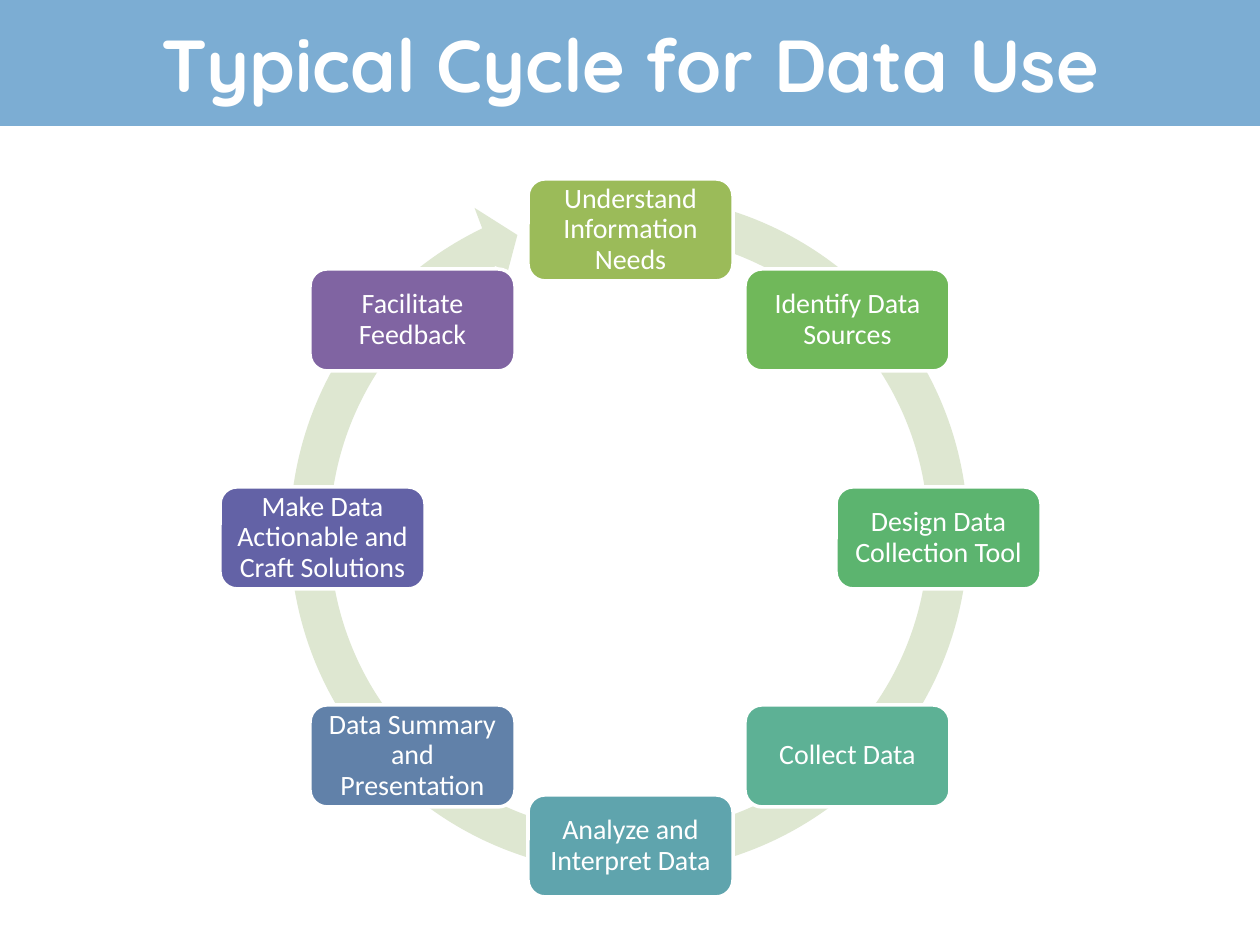
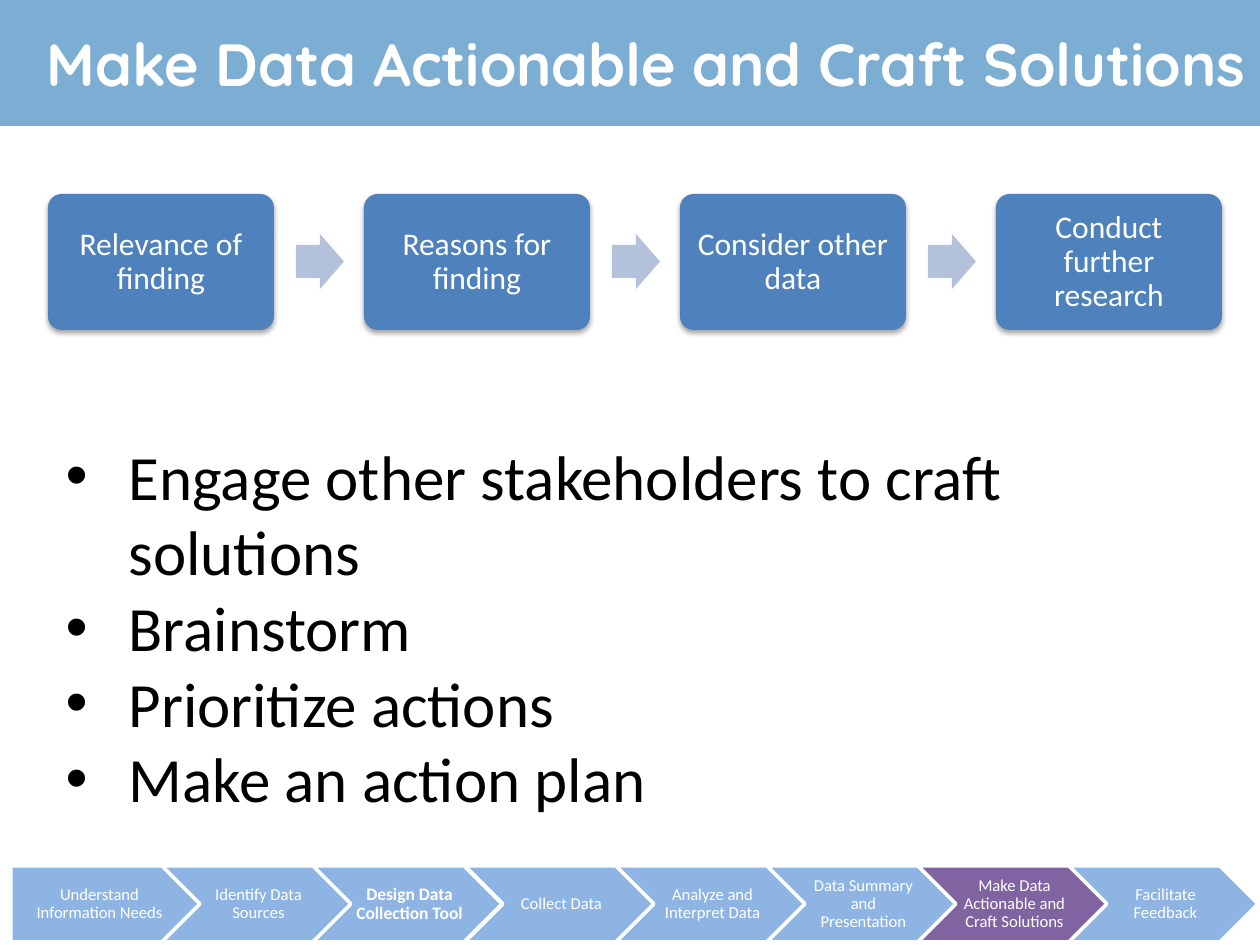
from math import cos, pi, sin

from lxml.etree import SubElement
from pptx import Presentation
from pptx.dml.color import RGBColor
from pptx.enum.shapes import MSO_SHAPE
from pptx.enum.text import MSO_ANCHOR, MSO_AUTO_SIZE, PP_ALIGN
from pptx.oxml.ns import qn
from pptx.util import Emu, Pt

PX_PER_INCH = 126
SLIDE_WIDTH, SLIDE_HEIGHT = 1260, 945

TITLE_FONT, BODY_FONT = "Quicksand", "Calibri"
WHITE, BLACK = "FFFFFF", "000000"
BAND_BLUE = "7CADD3"
RING_GREEN = "DEE7D1"
FLOW_BLUE, FLOW_ARROW_BLUE = "4F81BD", "B3C1DB"
STAGE_BLUE, CURRENT_PURPLE = "8EB4E3", "8064A2"

STAGES = [
    ("Understand Information Needs", "9BBB59"),
    ("Identify Data Sources", "70B85A"),
    ("Design Data Collection Tool", "5CB46F"),
    ("Collect Data", "5DB195"),
    ("Analyze and Interpret Data", "5FA4AD"),
    ("Data Summary and Presentation", "6181A9"),
    ("Make Data Actionable and Craft Solutions", "6362A6"),
    ("Facilitate Feedback", "8064A2"),
]
CURRENT_STAGE = "Make Data Actionable and Craft Solutions"
BOLD_STAGE = "Design Data Collection Tool"
FLOW_STEPS = ["Relevance of finding", "Reasons for finding",
              "Consider other data", "Conduct further research"]
ACTIONS = ["Engage other stakeholders to craft solutions", "Brainstorm",
           "Prioritize actions", "Make an action plan"]


def px(length):
    return Emu(round(length * 914400 / PX_PER_INCH))


def color(hex_string):
    return RGBColor.from_string(hex_string)


def place(shape, left, top, width, height):
    shape.left, shape.top = px(left), px(top)
    shape.width, shape.height = px(width), px(height)


def paint(shape, fill):
    shape.fill.solid()
    shape.fill.fore_color.rgb = color(fill)


def add_run(paragraph, text, size, font=BODY_FONT, fill=WHITE, bold=False):
    run = paragraph.add_run()
    run.text = text
    run.font.name = font
    run.font.size = Pt(size)
    run.font.bold = bold
    run.font.color.rgb = color(fill)


def add_title_band(slide, text, size, width=SLIDE_WIDTH):
    title = slide.shapes.title
    place(title, 0, 0, width, 126)
    paint(title, BAND_BLUE)
    frame = title.text_frame
    frame.auto_size = MSO_AUTO_SIZE.NONE
    frame.vertical_anchor = MSO_ANCHOR.MIDDLE
    paragraph = frame.paragraphs[0]
    paragraph.alignment = PP_ALIGN.CENTER
    add_run(paragraph, text, size, TITLE_FONT, bold=True)


def add_figure(slide, kind, box, fill, adjustments=(), outlined=False):
    shape = slide.shapes.add_shape(kind, *[px(length) for length in box])
    shape.shadow.inherit = False
    paint(shape, fill)
    if outlined:
        shape.line.color.rgb = color(WHITE)
        shape.line.width = Pt(2)
    else:
        shape.line.fill.background()
    for index, value in enumerate(adjustments):
        shape.adjustments[index] = value
    return shape


def add_label(shape, text, size, insets=(9, 9, 9, 9), bold=False):
    """Write centred text; insets are left, top, right, bottom."""
    frame = shape.text_frame
    frame.word_wrap = True
    frame.vertical_anchor = MSO_ANCHOR.MIDDLE
    (frame.margin_left, frame.margin_top,
     frame.margin_right, frame.margin_bottom) = map(px, insets)
    paragraph = frame.paragraphs[0]
    paragraph.alignment = PP_ALIGN.CENTER
    paragraph.line_spacing = 0.9
    add_run(paragraph, text, size, bold=bold)


def add_soft_shadow(shape):
    effects = shape._element.spPr.find(qn("a:effectLst"))
    shadow = SubElement(effects, qn("a:outerShdw"), blurRad=str(Pt(3.1)),
                        dist=str(Pt(1.8)), dir="5400000", rotWithShape="0")
    shade = SubElement(shadow, qn("a:srgbClr"), val=BLACK)
    SubElement(shade, qn("a:alpha"), val="35000")


def add_cycle(slide):
    add_figure(slide, MSO_SHAPE.CIRCULAR_ARROW, (268, 173, 722, 722), RING_GREEN,
               (0.055, 3.307, 146.408, 168.79, 0.058))
    center_x, center_y, radius = 630, 538, 308
    width, height = 205, 102
    for index, (stage, fill) in enumerate(STAGES):
        angle = 2 * pi * index / len(STAGES)
        left = round(center_x + radius * sin(angle) - width / 2)
        top = round(center_y - radius * cos(angle) - height / 2)
        node = add_figure(slide, MSO_SHAPE.ROUNDED_RECTANGLE,
                          (left, top, width, height), fill, outlined=True)
        add_label(node, stage, 16)


def add_flow(slide):
    left, pitch = 48, 316
    for index, step in enumerate(FLOW_STEPS):
        step_left = left + index * pitch
        if index:
            add_figure(slide, MSO_SHAPE.RIGHT_ARROW,
                       (step_left - 68, 234, 48, 55), FLOW_ARROW_BLUE, (0.6, 0.5))
        box = add_figure(slide, MSO_SHAPE.ROUNDED_RECTANGLE,
                         (step_left, 194, 226, 136), FLOW_BLUE, (0.1,))
        add_soft_shadow(box)
        add_label(box, step, 18)


def add_bullets(slide, items):
    body = slide.placeholders[1]
    place(body, 53, 431, 1124, 394)
    frame = body.text_frame
    frame.auto_size = MSO_AUTO_SIZE.NONE
    for index, item in enumerate(items):
        paragraph = frame.add_paragraph() if index else frame.paragraphs[0]
        paragraph.space_before = Pt(0)
        properties = paragraph._p.get_or_add_pPr()
        properties.set("marL", str(px(63)))
        properties.set("indent", str(-px(63)))
        SubElement(properties, qn("a:buChar"), char="•")
        add_run(paragraph, item, 36, fill=BLACK)


def add_stage_tracker(slide):
    left, width = 11, 189
    pitch = width * 4 / 5
    for index, (stage, _) in enumerate(STAGES):
        kind = MSO_SHAPE.CHEVRON if index else MSO_SHAPE.PENTAGON
        fill = CURRENT_PURPLE if stage == CURRENT_STAGE else STAGE_BLUE
        arrow = add_figure(slide, kind, (round(left + index * pitch), 866, width, 76),
                           fill, outlined=True)
        bold = stage == BOLD_STAGE
        add_label(arrow, stage, 10 if bold else 9.5, (5 if index else 8, 4, 1, 4), bold)


def main():
    presentation = Presentation()
    presentation.slide_width = px(SLIDE_WIDTH)
    presentation.slide_height = px(SLIDE_HEIGHT)
    layouts = presentation.slide_layouts

    cycle_slide = presentation.slides.add_slide(layouts.get_by_name("Title Only"))
    add_title_band(cycle_slide, "Typical Cycle for Data Use", 42)
    add_cycle(cycle_slide)

    action_slide = presentation.slides.add_slide(layouts.get_by_name("Title and Content"))
    add_title_band(action_slide, CURRENT_STAGE, 34, width=1292)
    add_flow(action_slide)
    add_bullets(action_slide, ACTIONS)
    add_stage_tracker(action_slide)

    presentation.save("out.pptx")


if __name__ == "__main__":
    main()
